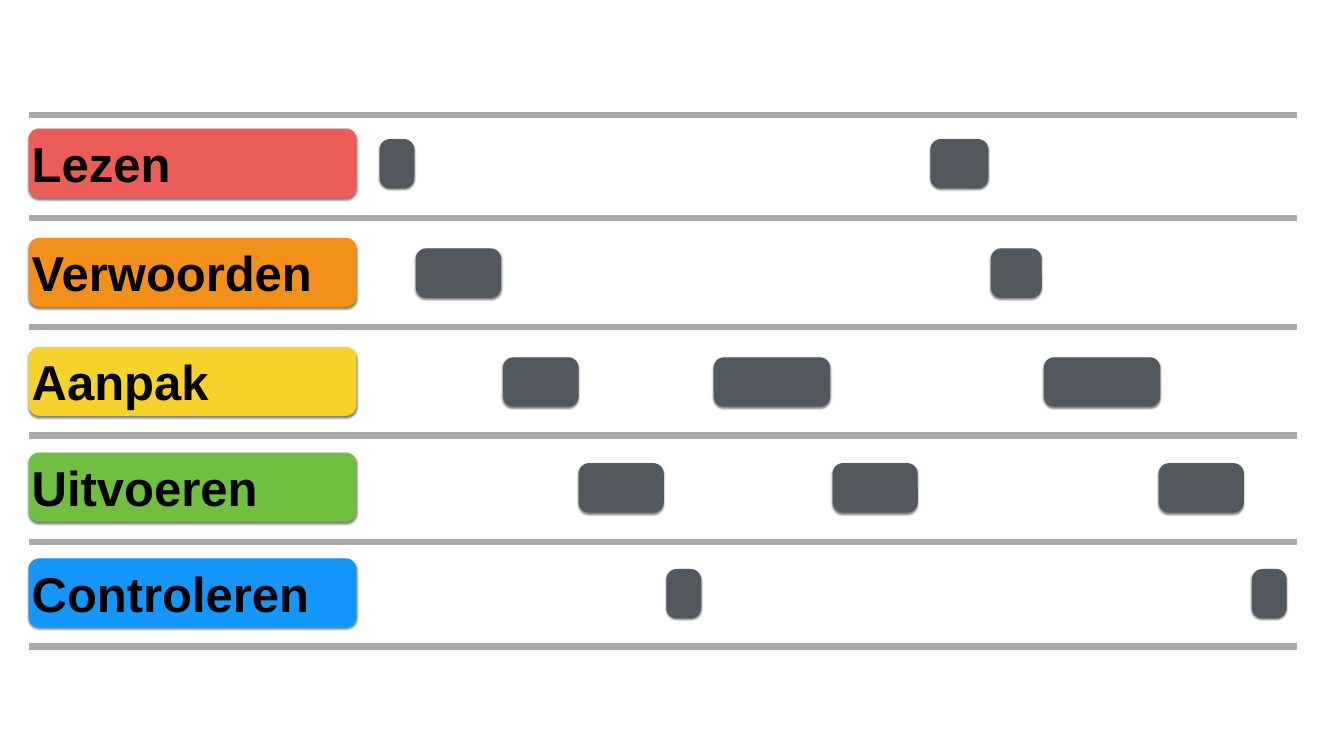
from dataclasses import dataclass
from lxml.etree import SubElement
from pptx import Presentation
from pptx.dml.color import RGBColor
from pptx.enum.shapes import MSO_CONNECTOR, MSO_SHAPE
from pptx.enum.text import MSO_ANCHOR, PP_ALIGN
from pptx.oxml.ns import qn
from pptx.shapes.autoshape import Shape
from pptx.slide import Slide
from pptx.util import Pt


@dataclass(frozen=True)
class Theme:
    font: str = "Arial"
    size: float = 70
    text: str = "000000"
    bar: str = "53585F"
    rule: str = "A6AAA9"
    shade: str = "000000"
    weight: float = 9


@dataclass(frozen=True)
class Bar:
    left: float
    width: float


@dataclass(frozen=True)
class Phase:
    name: str
    color: str
    top: float
    rule: float
    bars: tuple[Bar, ...]


THEME = Theme()
LEFT, RIGHT = 41, 1852.6
LABEL_W, LABEL_H, BAR_H = 468, 98.6, 70.6
RADIUS = 15
TOP_RULE = 164.2
SHORT, MID, LONG = 49.7, 121.7, 166.3

PHASES = (
    Phase("Lezen", "EC5D57", 183.6, 311, (Bar(542.2, SHORT), Bar(1329.1, 82.8))),
    Phase("Verwoorden", "F39019", 339.8, 467.3, (Bar(594, MID), Bar(1415.5, 72.7))),
    Phase("Aanpak", "F5D328", 495.4, 622.1,
          (Bar(718.6, 108), Bar(1019.5, LONG), Bar(1491.1, LONG))),
    Phase("Uitvoeren", "70BF41", 646.6, 774,
          (Bar(826.6, MID), Bar(1189.4, MID), Bar(1655.3, MID))),
    Phase("Controleren", "1497FC", 797.8, 923.8,
          (Bar(951.8, SHORT), Bar(1788.5, SHORT))),
)


def add_shade(shape: Shape) -> None:
    shape.shadow.inherit = False
    effects = shape._element.spPr.find(qn("a:effectLst"))
    outer = SubElement(effects, qn("a:outerShdw"), blurRad=str(Pt(3)),
                       dist=str(Pt(2)), dir="5400000", rotWithShape="0")
    color = SubElement(outer, qn("a:srgbClr"), val=THEME.shade)
    SubElement(color, qn("a:alpha"), val="50000")


def add_box(slide: Slide, left: float, top: float, width: float,
            height: float, color: str) -> Shape:
    box = slide.shapes.add_shape(MSO_SHAPE.ROUNDED_RECTANGLE,
                                 Pt(left), Pt(top), Pt(width), Pt(height))
    box.adjustments[0] = RADIUS / min(width, height)
    box.fill.solid()
    box.fill.fore_color.rgb = RGBColor.from_string(color)
    box.line.fill.background()
    add_shade(box)
    return box


def add_label(slide: Slide, phase: Phase) -> None:
    box = add_box(slide, LEFT, phase.top, LABEL_W, LABEL_H, phase.color)
    frame = box.text_frame
    frame.margin_left = frame.margin_right = Pt(0)
    frame.margin_top = frame.margin_bottom = Pt(0)
    frame.vertical_anchor = MSO_ANCHOR.MIDDLE
    frame.word_wrap = True
    line = frame.paragraphs[0]
    line.text = phase.name
    line.alignment = PP_ALIGN.LEFT
    line.font.name = THEME.font
    line.font.size = Pt(THEME.size)
    line.font.bold = True
    line.font.color.rgb = RGBColor.from_string(THEME.text)


def add_rule(slide: Slide, top: float) -> None:
    rule = slide.shapes.add_connector(MSO_CONNECTOR.STRAIGHT,
                                      Pt(LEFT), Pt(top), Pt(RIGHT), Pt(top))
    rule.line.color.rgb = RGBColor.from_string(THEME.rule)
    rule.line.width = Pt(THEME.weight)
    SubElement(rule._element.spPr, qn("a:effectLst"))


def main() -> None:
    deck = Presentation()
    deck.slide_width, deck.slide_height = Pt(1920), Pt(1080)
    slide = deck.slides.add_slide(deck.slide_layouts[6])
    for phase in PHASES:
        add_label(slide, phase)
    for phase in PHASES:
        top = phase.top + (LABEL_H - BAR_H) / 2 + 1
        for bar in phase.bars:
            add_box(slide, bar.left, top, bar.width, BAR_H, THEME.bar)
    for top in (TOP_RULE, *(phase.rule for phase in PHASES)):
        add_rule(slide, top)
    deck.save("out.pptx")


if __name__ == "__main__":
    main()
